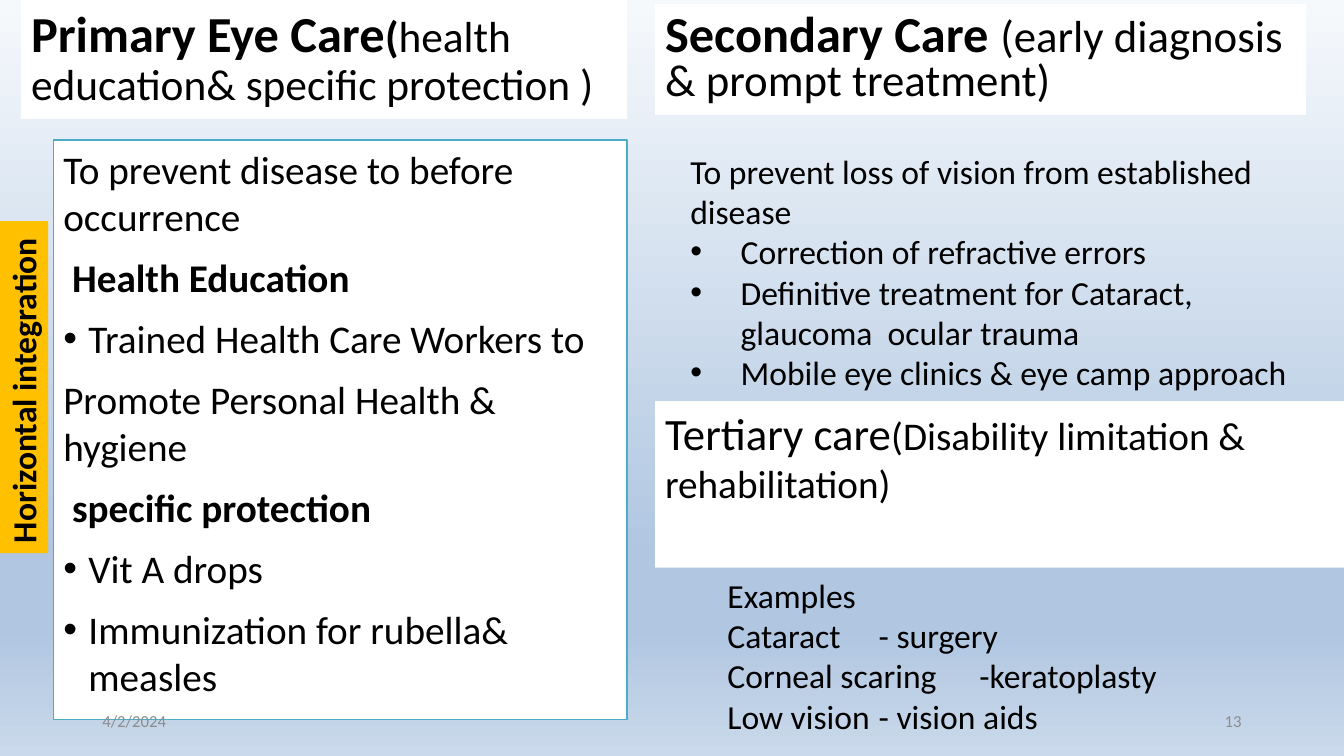
from lxml import etree
from pptx import Presentation
from pptx.dml.color import RGBColor
from pptx.enum.text import MSO_ANCHOR, MSO_AUTO_SIZE, PP_ALIGN
from pptx.oxml.ns import qn
from pptx.util import Pt

TOP, MIDDLE = MSO_ANCHOR.TOP, MSO_ANCHOR.MIDDLE
LEFT, RIGHT = PP_ALIGN.LEFT, PP_ALIGN.RIGHT
NO_AUTOFIT = MSO_AUTO_SIZE.NONE
FONT = "Calibri"
COLORS = {
    "text": "000000",
    "muted": "8C8C8C",
    "panel": "FFFFFF",
    "border": "4BACC6",
    "banner": "FFC000",
}
BACKGROUND_STOPS = [(0, "F6F9FC"), (74, "B0C6E1"), (83, "B0C6E1"), (100, "CAD9EB")]

PLAIN, BOLD, BULLET = (False, False), (True, False), (False, True)

PRIMARY_HEADING = [("Primary Eye Care", 36, True), ("(", 31, True),
                   ("health education& specific protection )", 31, False)]
SECONDARY_HEADING = [("Secondary Care ", 36, True),
                     ("(early diagnosis & prompt treatment)", 32, False)]
TERTIARY_HEADING = [("Tertiary care", 32, False),
                    ("(Disability limitation & rehabilitation)", 28, False)]
PRIMARY_POINTS = [
    ("To prevent disease to before occurrence", PLAIN),
    (" Health Education", BOLD),
    ("Trained Health Care Workers to", BULLET),
    ("Promote Personal Health & hygiene", PLAIN),
    (" specific protection", BOLD),
    ("Vit A drops", BULLET),
    ("Immunization for rubella& measles", BULLET),
]
SECONDARY_POINTS = [
    ("To prevent loss of vision from established disease", PLAIN),
    ("Correction of refractive errors", BULLET),
    ("Definitive treatment for Cataract, glaucoma  ocular trauma", BULLET),
    ("Mobile eye clinics & eye camp approach", BULLET),
]
TERTIARY_EXAMPLES = [
    ("Examples", PLAIN),
    ("Cataract\t- surgery", PLAIN),
    ("Corneal scaring\t-keratoplasty", PLAIN),
    ("Low vision\t- vision aids", PLAIN),
]
EXAMPLE_TAB = 226


def rgb(name):
    return RGBColor.from_string(COLORS[name])


def set_bullet(paragraph, indent, bulleted):
    properties = paragraph._p.get_or_add_pPr()
    properties.set("marL", str(Pt(indent if bulleted else 0)))
    properties.set("indent", str(-Pt(indent) if bulleted else 0))
    if bulleted:
        etree.SubElement(properties, qn("a:buFont"), typeface="Arial")
        etree.SubElement(properties, qn("a:buChar"), char="•")
    else:
        etree.SubElement(properties, qn("a:buNone"))


def add_run(paragraph, text, size, bold, color="text"):
    run = paragraph.add_run()
    run.text = text
    run.font.color.rgb = rgb(color)
    style = {"name": FONT, "size": Pt(size), "bold": bold}
    for attribute, value in style.items():
        setattr(run.font, attribute, value)


def place(shape, box, fill=None, anchor=TOP, wrap=True):
    for attribute, value in zip(("left", "top", "width", "height"), box):
        setattr(shape, attribute, Pt(value))
    if fill:
        shape.fill.solid()
        shape.fill.fore_color.rgb = rgb(fill)
    frame_format = {"auto_size": NO_AUTOFIT, "word_wrap": wrap, "vertical_anchor": anchor}
    for attribute, value in frame_format.items():
        setattr(shape.text_frame, attribute, value)
    return shape


def add_box(slide, box, **options):
    shape = slide.shapes.add_textbox(*map(Pt, box))
    return place(shape, box, **options)


def write_heading(shape, runs, spacing=1.0):
    paragraph = shape.text_frame.paragraphs[0]
    paragraph.alignment = LEFT
    paragraph.line_spacing = spacing
    for text, size, bold in runs:
        add_run(paragraph, text, size, bold)


def write_points(shape, points, size, indent=0, before=0):
    frame = shape.text_frame
    for index, (text, (bold, bulleted)) in enumerate(points):
        paragraph = frame.add_paragraph() if index else frame.paragraphs[0]
        paragraph.space_before = Pt(before)
        set_bullet(paragraph, indent, bulleted)
        if "\t" in text:
            tabs = etree.SubElement(paragraph._p.get_or_add_pPr(), qn("a:tabLst"))
            etree.SubElement(tabs, qn("a:tab"), pos=str(Pt(EXAMPLE_TAB)), algn="l")
        add_run(paragraph, text, size, bold)


def paint_background(slide):
    fill = slide.background.fill
    fill.gradient()
    fill.gradient_angle = 270
    stops = slide._element.find(".//" + qn("a:gsLst"))
    for stop in list(stops):
        stops.remove(stop)
    for percent, color in BACKGROUND_STOPS:
        stop = etree.SubElement(stops, qn("a:gs"), pos=str(percent * 1000))
        etree.SubElement(stop, qn("a:srgbClr"), val=color)


def main():
    deck = Presentation()
    deck.slide_width, deck.slide_height = Pt(960), Pt(540)
    slide = deck.slides.add_slide(deck.slide_layouts[1])
    paint_background(slide)

    primary_title = place(slide.shapes.title, (15, 0, 433, 85), fill="panel", anchor=MIDDLE)
    write_heading(primary_title, PRIMARY_HEADING, 0.9)

    primary_body = place(slide.placeholders[1], (38, 100, 410, 414), fill="panel")
    primary_body.line.color.rgb = rgb("border")
    primary_body.line.width = Pt(1)
    write_points(primary_body, PRIMARY_POINTS, 28, indent=18, before=10)

    footers = [("4/2/2024", 66, LEFT), ("13", 678, RIGHT)]
    for text, left, alignment in footers:
        footer = add_box(slide, (left, 500.5, 216, 28.75), anchor=MIDDLE)
        paragraph = footer.text_frame.paragraphs[0]
        paragraph.alignment = alignment
        add_run(paragraph, text, 12, False, "muted")

    banner = add_box(slide, (-102, 258.5, 237, 36), fill="banner", wrap=False)
    banner.rotation = 270
    write_heading(banner, [("Horizontal integration", 24, True)])

    secondary_title = add_box(slide, (468, 3, 465, 79), fill="panel", anchor=MIDDLE)
    write_heading(secondary_title, SECONDARY_HEADING, 0.8)
    secondary_body = add_box(slide, (486, 104, 463, 181))
    write_points(secondary_body, SECONDARY_POINTS, 24, indent=36)

    tertiary_title = add_box(slide, (468, 286.5, 492, 119), fill="panel")
    write_heading(tertiary_title, TERTIARY_HEADING)
    tertiary_body = add_box(slide, (512.5, 407, 436, 124))
    write_points(tertiary_body, TERTIARY_EXAMPLES, 24)

    deck.save("out.pptx")


if __name__ == "__main__":
    main()
